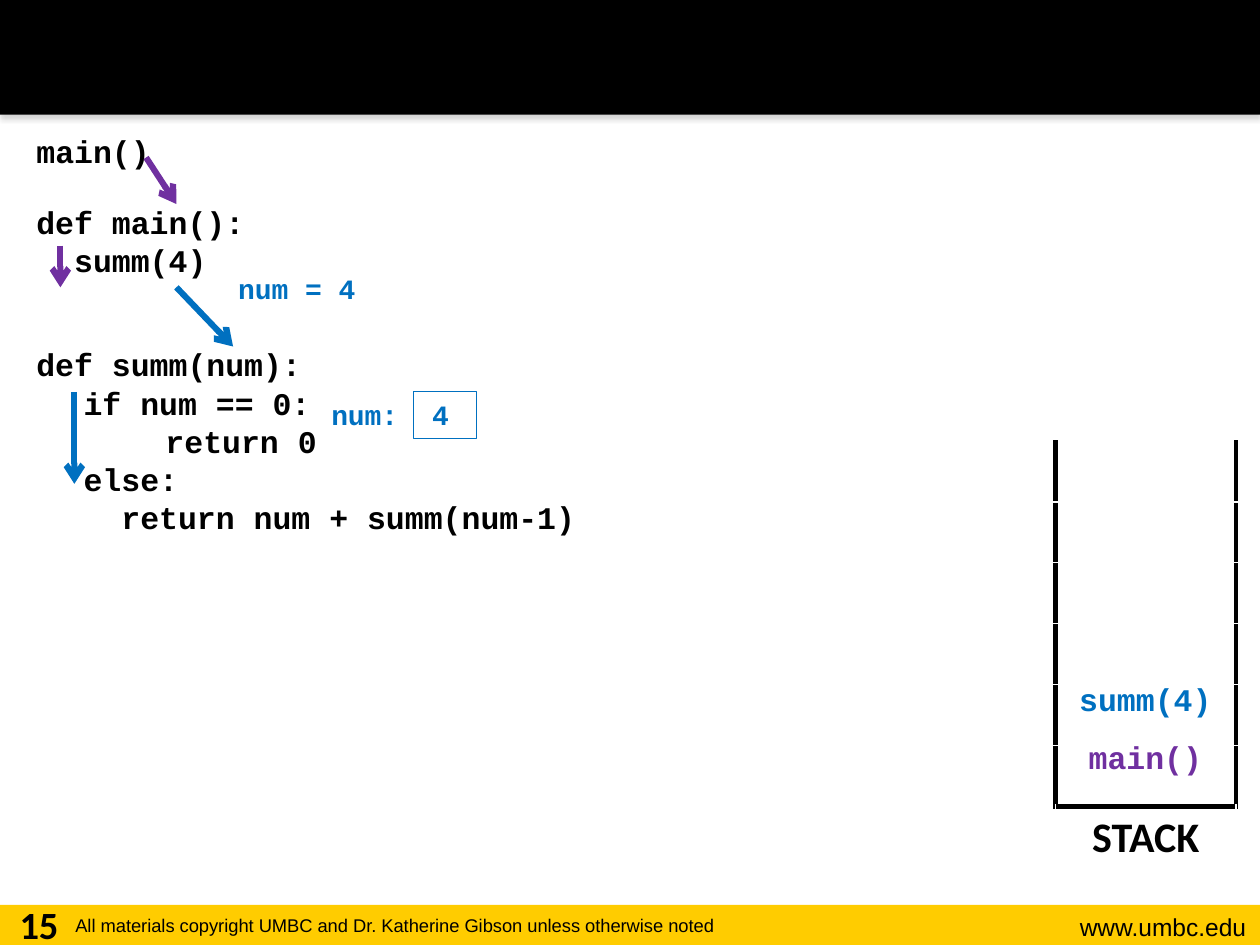
from typing import NamedTuple
from lxml import etree
from pptx import Presentation
from pptx.dml.color import RGBColor
from pptx.enum.shapes import MSO_CONNECTOR, MSO_SHAPE
from pptx.enum.text import MSO_ANCHOR, PP_ALIGN
from pptx.oxml.ns import qn
from pptx.util import Pt

LEFT, MID, RIGHT = PP_ALIGN.LEFT, PP_ALIGN.CENTER, PP_ALIGN.RIGHT
TOP, CENTER = MSO_ANCHOR.TOP, MSO_ANCHOR.MIDDLE
RECT = MSO_SHAPE.RECTANGLE
LINE = MSO_CONNECTOR.STRAIGHT
BLACK, WHITE, GOLD = "000000", "FFFFFF", "FFCC00"
BLUE, PURPLE = "0070C0", "7030A0"
CODE = "Courier New"
INDENT = 27


class Box(NamedTuple):
    x: float
    y: float
    w: float
    h: float


class Label(NamedTuple):
    box: Box
    text: str
    size: float
    font: str = CODE
    color: str = BLACK
    align: PP_ALIGN = LEFT
    bold: bool = True
    tab: float = 0


class Code(NamedTuple):
    box: Box
    lines: list[str]


class Arrow(NamedTuple):
    x1: float
    y1: float
    x2: float
    y2: float
    color: str


LABELS = [
    Label(Box(576, 517.7, 143.3, 24.5), "www.umbc.edu", 14, "Arial",
          align=RIGHT, bold=False),
    Label(Box(36, 519.1, 472.3, 20.9),
          "All materials copyright UMBC and Dr. Katherine Gibson unless otherwise noted",
          10.5, "Arial", bold=False),
    Label(Box(0, 511.2, 44.6, 28.8), "15", 22, "Calibri", align=MID),
    Label(Box(126.7, 151.9, 85.7, 26.6), "num = 4", 16, color=BLUE, align=MID),
    Label(Box(182.2, 223.9, 90, 26.6), "num:\t4", 16, color=BLUE, tab=57.6),
]
CODES = [
    Code(Box(13.7, 198, 324, 118), ["def summ(num):", "\tif num == 0:", "\t\t return 0",
                                    "\telse:", "\t  return num + summ(num-1)"]),
    Code(Box(13.7, 76.3, 87, 28), ["main()"]),
    Code(Box(13.7, 116.6, 136.8, 47.5), ["def main():", "  summ(4)"]),
]
ARROWS = [
    Arrow(83.5, 90, 100.8, 116.6, PURPLE),
    Arrow(34.5, 140.4, 34.5, 164.2, PURPLE),
    Arrow(100.8, 164.2, 133.2, 198, BLUE),
    Arrow(42.5, 223.9, 42.5, 276.5, BLUE),
]
FRAMES = [("summ(4)", BLUE), ("main()", PURPLE)]


def rgb(code: str) -> RGBColor:
    return RGBColor.from_string(code)


def style(para, size: float, font: str, color: str, bold: bool = True) -> None:
    para.font.size, para.font.name, para.font.bold = Pt(size), font, bold
    para.font.color.rgb = rgb(color)


def set_tab(para, step: float) -> None:
    para._p.get_or_add_pPr().set("defTabSz", str(int(Pt(step))))


def add_rect(shapes, box: Box, fill: str = "", line: str = ""):
    rect = shapes.add_shape(RECT, *map(Pt, box))
    rect.shadow.inherit = False
    if fill:
        rect.fill.solid()
        rect.fill.fore_color.rgb = rgb(fill)
    else:
        rect.fill.background()
    if line:
        rect.line.color.rgb, rect.line.width = rgb(line), Pt(0.75)
    else:
        rect.line.fill.background()
    return rect


def drop_shadow(shape) -> None:
    glow = etree.SubElement(shape._element.spPr.find(qn("a:effectLst")),
                            qn("a:outerShdw"), blurRad=str(Pt(3.1)),
                            dist=str(Pt(1.8)), dir="5400000", rotWithShape="0")
    tint = etree.SubElement(glow, qn("a:srgbClr"), val="808080")
    etree.SubElement(tint, qn("a:alpha"), val="35000")


def add_frame(shapes, box: Box):
    frame = shapes.add_textbox(*map(Pt, box)).text_frame
    frame.word_wrap = True
    frame.vertical_anchor = TOP
    return frame


def add_label(shapes, label: Label) -> None:
    para = add_frame(shapes, label.box).paragraphs[0]
    para.text, para.alignment = label.text, label.align
    if label.tab:
        set_tab(para, label.tab)
    style(para, label.size, label.font, label.color, label.bold)


def add_code(shapes, code: Code) -> None:
    frame = add_frame(shapes, code.box)
    for i, line in enumerate(code.lines):
        para = frame.add_paragraph() if i else frame.paragraphs[0]
        para.text, para.line_spacing = line, 0.8
        if i:
            para.space_before = Pt(4.5)
        props = para._p.get_or_add_pPr()
        props.set("marL", str(Pt(INDENT)))
        props.set("indent", str(-Pt(INDENT)))
        set_tab(para, 36)
        style(para, 18, CODE, BLACK)


def add_arrow(shapes, arrow: Arrow) -> None:
    line = shapes.add_connector(LINE, *map(Pt, arrow[:4]))
    line.line.color.rgb, line.line.width = rgb(arrow.color), Pt(3.5)
    etree.SubElement(line.line._get_or_add_ln(), qn("a:tailEnd"), type="arrow")
    etree.SubElement(line._element.spPr, qn("a:effectLst"))


def set_edges(cell, sides: str) -> None:
    """Draw black borders on the sides named by letter, in the order L R T B."""
    props = cell._tc.get_or_add_tcPr()
    for i, side in enumerate(sides):
        edge = etree.Element(qn(f"a:ln{side}"), w=str(Pt(3)))
        fill = etree.SubElement(edge, qn("a:solidFill"))
        etree.SubElement(fill, qn("a:srgbClr"), val=BLACK)
        props.insert(i, edge)


def add_stack(shapes, box: Box, count: int) -> None:
    table = shapes.add_table(count, 1, *map(Pt, box)).table
    table.first_row = table.horz_banding = False
    last = count - 1
    for i, row in enumerate(table.rows):
        row.height = Pt(box.h / count)
        cell = row.cells[0]
        cell.fill.background()
        set_edges(cell, "T" if i == last else "LRB" if i == last - 1 else "LR")
    para = table.cell(last, 0).text_frame.paragraphs[0]
    para.text, para.alignment = "STACK", MID
    style(para, 24, "Calibri", BLACK)


def add_call(shapes, box: Box, text: str, color: str) -> None:
    frame = add_rect(shapes, box, WHITE).text_frame
    frame.vertical_anchor = CENTER
    para = frame.paragraphs[0]
    para.text, para.alignment = text, MID
    style(para, 18, CODE, color)


def main() -> None:
    deck = Presentation()
    deck.slide_width, deck.slide_height = Pt(720), Pt(540)
    shapes = deck.slides.add_slide(deck.slide_layouts[6]).shapes
    add_rect(shapes, Box(0, 517, 720, 23), GOLD)
    drop_shadow(add_rect(shapes, Box(0, 0, 720, 65.5), BLACK))
    for label in LABELS:
        add_label(shapes, label)
    for code in CODES:
        add_code(shapes, code)
    for arrow in ARROWS:
        add_arrow(shapes, arrow)
    add_rect(shapes, Box(236.2, 223.9, 36, 26.6), line=BLUE)
    add_stack(shapes, Box(603.2, 252, 103, 243.6), 7)
    for i, (text, color) in enumerate(FRAMES):
        add_call(shapes, Box(607.7, 383 + 33.1 * i, 93.6, 33.1), text, color)
    deck.save("out.pptx")


if __name__ == "__main__":
    main()
